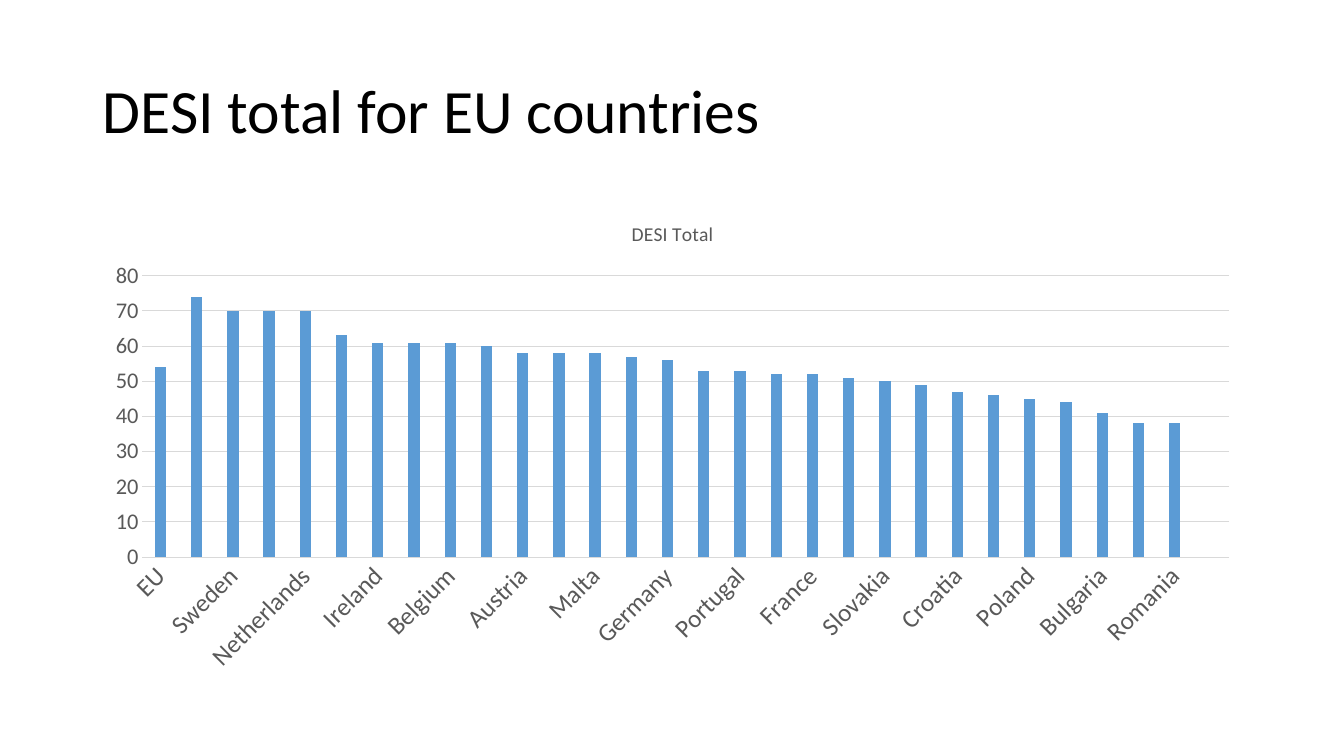
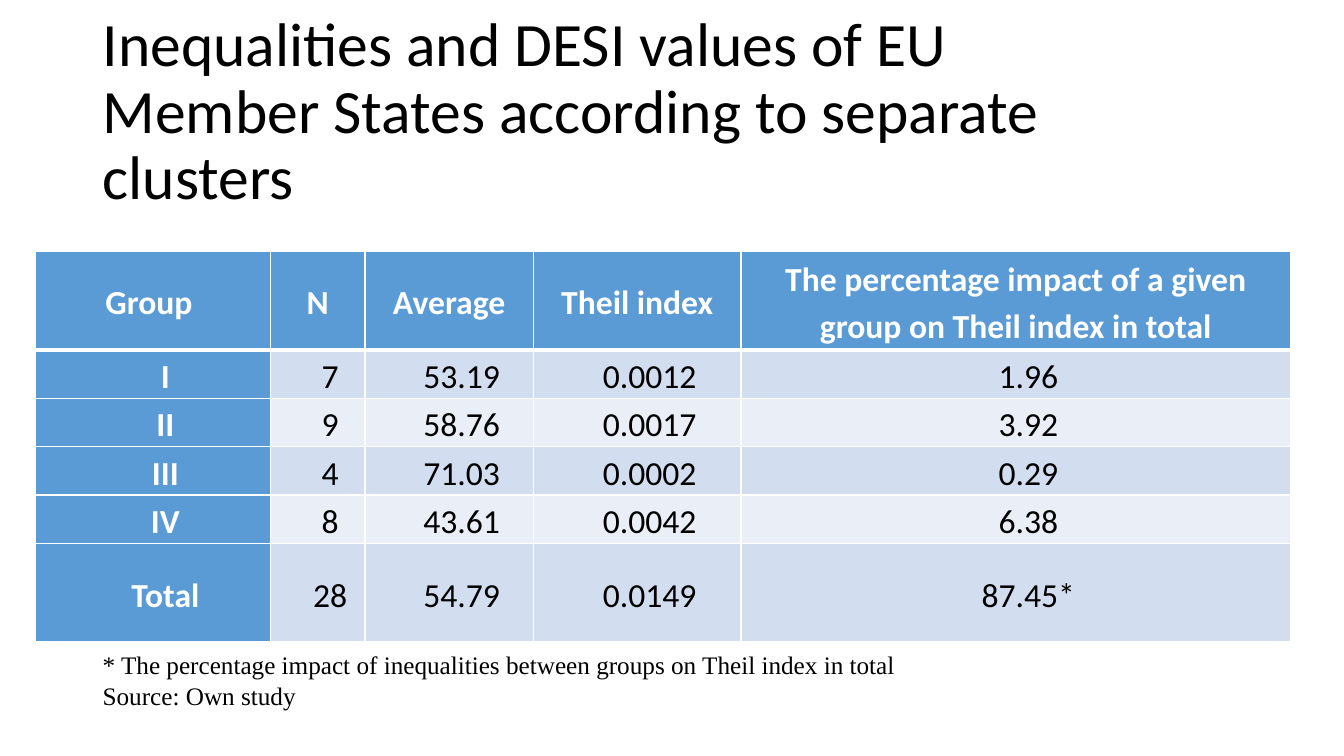
from lxml.etree import SubElement
from pptx import Presentation
from pptx.chart.data import CategoryChartData
from pptx.dml.color import RGBColor
from pptx.enum.chart import XL_CHART_TYPE, XL_TICK_MARK
from pptx.enum.text import MSO_ANCHOR, PP_ALIGN
from pptx.oxml import parse_xml
from pptx.oxml.ns import nsdecls, qn
from pptx.util import Pt

EMU_PER_PX = 9144  # 100 px to the inch

COLORS = {
    "text": "000000",
    "white": "FFFFFF",
    "accent": "5B9BD5",
    "band_dark": "D2DEEF",
    "band_light": "EAEFF7",
    "axis_text": "595959",
    "grid": "D9D9D9",
}

DESI_TOTALS = {
    "EU": 54, "Denmark": 74, "Sweden": 70, "Finland": 70, "Netherlands": 70,
    "Luxembourg": 63, "Ireland": 61, "United Kingdom": 61, "Belgium": 61,
    "Estonia": 60, "Austria": 58, "Spain": 58, "Malta": 58, "Lithuania": 57,
    "Germany": 56, "Slovenia": 53, "Portugal": 53, "Czech Republic": 52,
    "France": 52, "Latvia": 51, "Slovakia": 50, "Cyprus": 49, "Croatia": 47,
    "Hungary": 46, "Poland": 45, "Italy": 44, "Bulgaria": 41, "Greece": 38,
    "Romania": 38,
    "": None,  # empty slot at the right end of the axis
}

CLUSTER_ROWS = [
    ["Group ", "N", "Average", "Theil index",
     "The percentage impact of a given group on Theil index in total"],
    ["I", "7", "53.19", "0.0012", "1.96"],
    ["II", "9", "58.76", "0.0017", "3.92"],
    ["III", "4", "71.03", "0.0002", "0.29"],
    ["IV", "8", "43.61", "0.0042", "6.38"],
    ["Total", "28", "54.79", "0.0149", "87.45*"],
]


def px(length):
    return length * EMU_PER_PX


def rgb(name):
    return RGBColor.from_string(COLORS[name])


def set_attributes(target, **values):
    for name, value in values.items():
        setattr(target, name, value)


def style_font(font, size, color="text", bold=False, name="Calibri"):
    set_attributes(font, name=name, size=Pt(size), bold=bold)
    font.color.rgb = rgb(color)


class Deck:
    """Holds the presentation, its shared style and the current slide."""

    title_box = (92, 40, 1150, 145)

    def __init__(self):
        self.presentation = Presentation()
        set_attributes(self.presentation, slide_width=px(1333), slide_height=px(750))
        self.slide = None

    def add_slide(self, title):
        self.slide = self.presentation.slides.add_slide(self.presentation.slide_layouts[6])
        self.add_text(self.title_box, [(title, 0.9)], 44, anchor=MSO_ANCHOR.MIDDLE)

    def add_text(self, box, lines, size, name="Calibri", anchor=MSO_ANCHOR.TOP):
        """Add a text box; lines are pairs of text and line spacing."""
        frame = self.slide.shapes.add_textbox(*map(px, box)).text_frame
        set_attributes(frame, word_wrap=True, vertical_anchor=anchor)
        for index, (text, spacing) in enumerate(lines):
            paragraph = frame.add_paragraph() if index else frame.paragraphs[0]
            set_attributes(paragraph, text=text, line_spacing=spacing)
            for run in paragraph.runs:
                style_font(run.font, size, name=name)

    def add_column_chart(self, box, title, values):
        data = CategoryChartData()
        data.categories = list(values)
        data.add_series(title, list(values.values()))
        chart = self.slide.shapes.add_chart(
            XL_CHART_TYPE.COLUMN_CLUSTERED, *map(px, box), data).chart
        set_attributes(chart, has_legend=False, has_title=True)
        style_font(chart.font, 10)
        title_frame = chart.chart_title.text_frame
        title_frame.text = title
        style_font(title_frame.paragraphs[0].runs[0].font, 14, "axis_text")

        plot = chart.plots[0]
        set_attributes(plot, gap_width=219, overlap=-27, vary_by_categories=False)
        series_fill = plot.series[0].format.fill
        series_fill.solid()
        series_fill.fore_color.rgb = rgb("accent")

        for axis, size in ((chart.category_axis, 18), (chart.value_axis, 16)):
            set_attributes(axis, major_tick_mark=XL_TICK_MARK.NONE,
                           minor_tick_mark=XL_TICK_MARK.NONE)
            style_font(axis.tick_labels.font, size, "axis_text")
        chart.value_axis.format.line.fill.background()
        for lined in (chart.category_axis, chart.value_axis.major_gridlines):
            lined.format.line.width = Pt(0.75)
            lined.format.line.color.rgb = rgb("grid")
        label_body = chart.category_axis.tick_labels.font._element.getparent().getparent().getparent()
        label_body.find(qn("a:bodyPr")).set("rot", "-2700000")

    def add_table(self, box, rows, column_widths, row_heights):
        table = self.slide.shapes.add_table(len(rows), len(rows[0]), *map(px, box)).table
        set_attributes(table, first_row=False, horz_banding=False)
        for column, width in zip(table.columns, column_widths):
            column.width = px(width)
        for row, height in zip(table.rows, row_heights):
            row.height = px(height)
        for row_index, texts in enumerate(rows):
            for column_index, text in enumerate(texts):
                self.fill_cell(table.cell(row_index, column_index), text,
                               row_index, column_index)

    def fill_cell(self, cell, text, row_index, column_index):
        is_header = row_index == 0
        is_heading = is_header or column_index == 0
        set_attributes(cell, text=text, vertical_anchor=MSO_ANCHOR.MIDDLE,
                       margin_left=px(7), margin_right=px(7),
                       margin_top=0, margin_bottom=0)
        paragraph = cell.text_frame.paragraphs[0]
        set_attributes(paragraph, alignment=PP_ALIGN.CENTER, line_spacing=1.15)
        if not is_header:
            properties = paragraph._p.get_or_add_pPr()
            properties.set("marL", str(px(50)))
            properties.set("indent", str(px(-25)))
        style_font(paragraph.runs[0].font, 24,
                   "white" if is_heading else "text", is_heading)
        self.add_borders(cell, top=3 if row_index == 1 else 1,
                         bottom=3 if is_header else 1)
        band = "band_dark" if row_index % 2 else "band_light"
        cell.fill.solid()
        cell.fill.fore_color.rgb = rgb("accent" if is_heading else band)

    def add_borders(self, cell, top, bottom):
        properties = cell._tc.get_or_add_tcPr()
        for side, width in (("L", 1), ("R", 1), ("T", top), ("B", bottom)):
            line = parse_xml(f'<a:ln{side} {nsdecls("a")} w="{Pt(width)}"/>')
            fill = SubElement(line, qn("a:solidFill"))
            SubElement(fill, qn("a:srgbClr"), val=COLORS["white"])
            properties.append(line)


def main():
    deck = Deck()

    deck.add_slide("DESI total for EU countries")
    deck.add_column_chart((92, 200, 1150, 476), "DESI Total", DESI_TOTALS)

    deck.add_slide("Inequalities and DESI values of EU\v"
                   "Member States according to separate clusters")
    deck.add_table((35, 249, 1245, 388), CLUSTER_ROWS,
                   (233, 94, 167, 206, 545), (98, 48, 48, 48, 48, 98))
    deck.add_text((92, 635, 944, 75), [
        ("* The percentage impact of inequalities between groups on Theil index in total", 1.15),
        ("Source: Own study", 1.0),
    ], 18, name="Times New Roman")

    deck.presentation.save("out.pptx")


if __name__ == "__main__":
    main()
